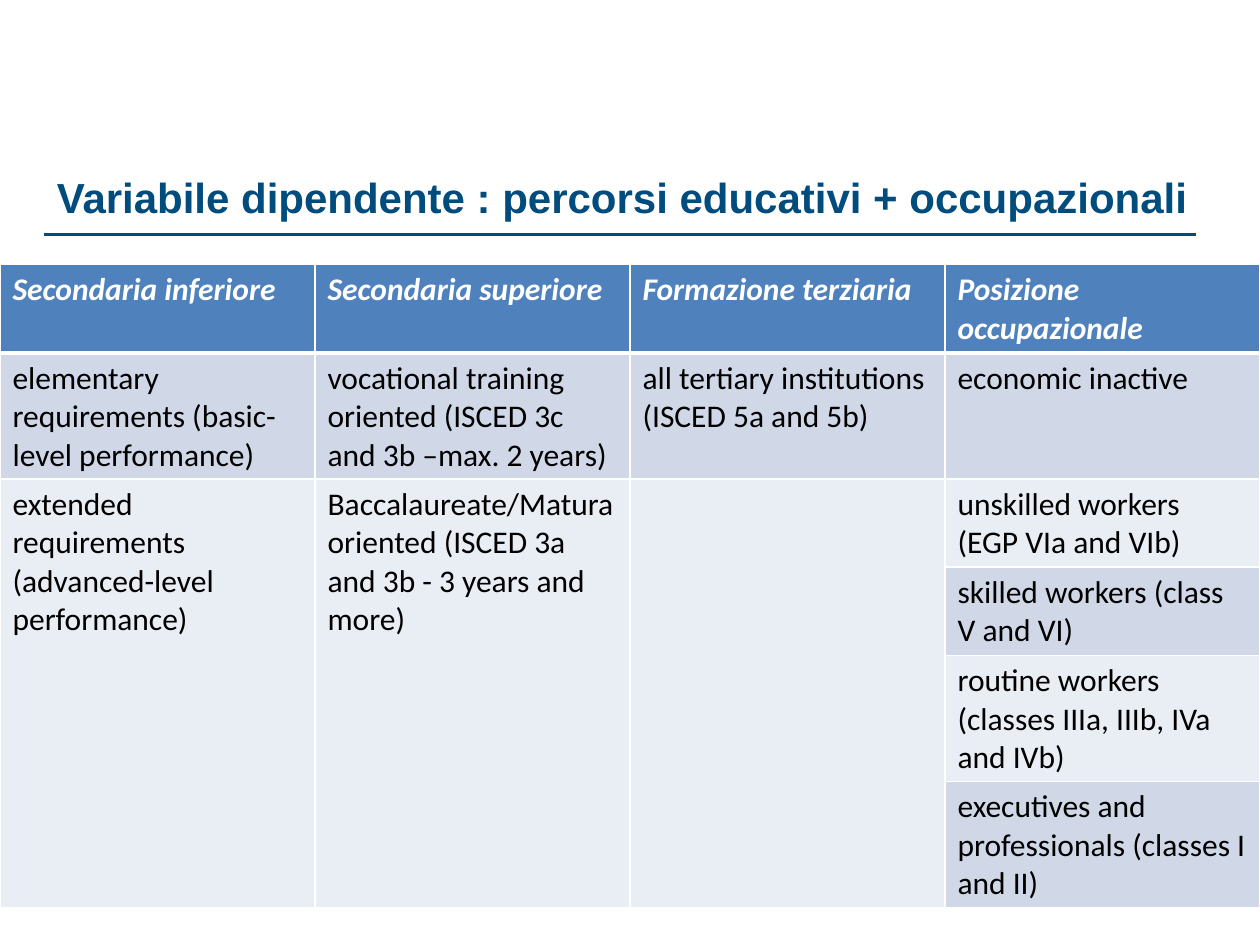
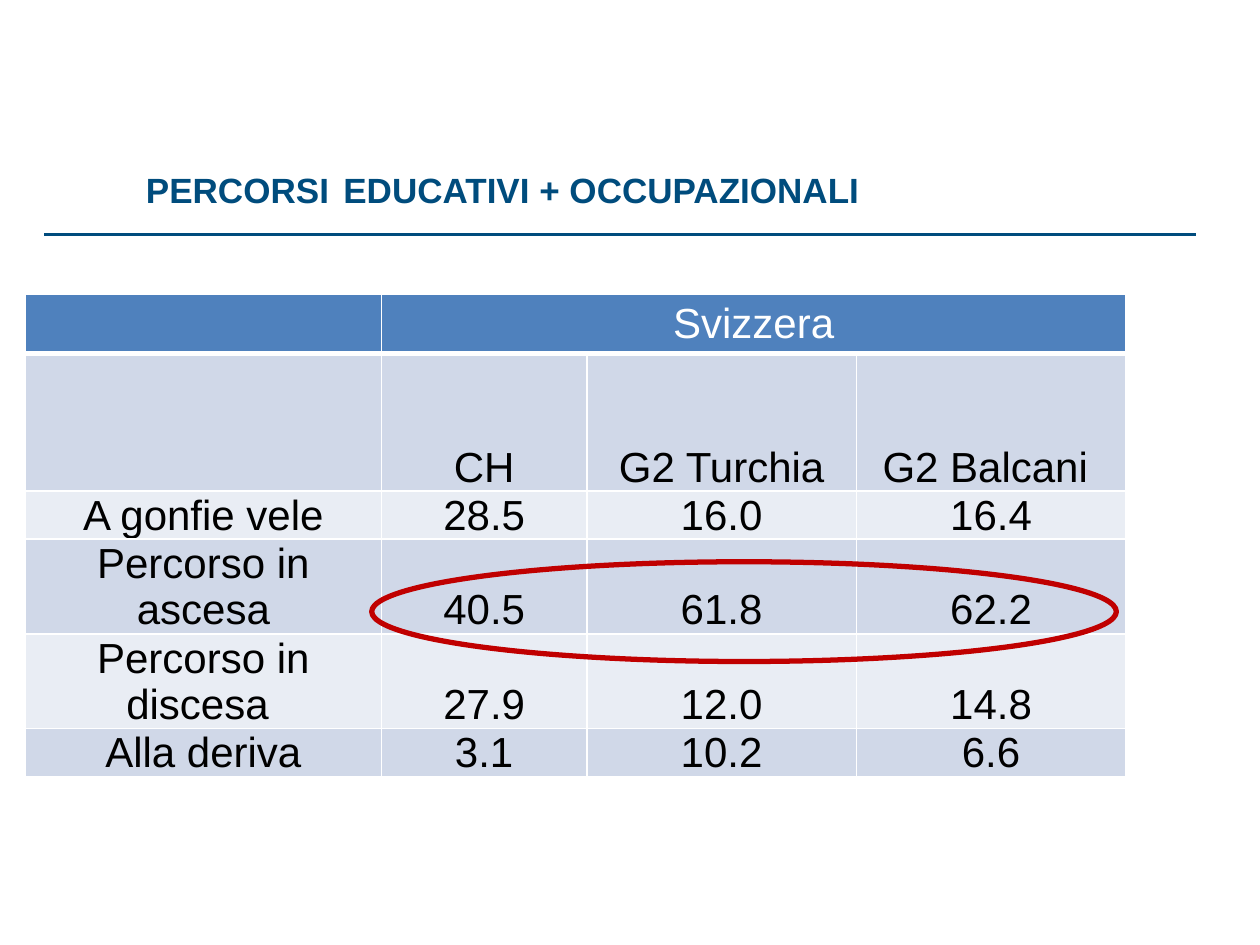
from pptx import Presentation
from pptx.dml.color import RGBColor as Rgb
from pptx.enum.shapes import MSO_CONNECTOR as Connector, MSO_SHAPE as Preset
from pptx.enum.text import MSO_ANCHOR as Anchor, PP_ALIGN as Align
from pptx.oxml import parse_xml
from pptx.oxml.ns import nsdecls
from pptx.util import Pt

# Content
COLOURS = {"title": "004C7D", "header": "4F81BD", "odd": "D0D8E8", "even": "E9EDF4",
           "light": "FFFFFF", "dark": "000000", "gap": "376092", "ring": "C00000"}

VARIABLE_TITLE = [("Variabile dipendente : percorsi educativi + occupazionali", "title_large")]
VARIABLE_ROWS = [
    ["Secondaria inferiore", "Secondaria superiore", "Formazione terziaria",
     "Posizione occupazionale"],
    ["elementary requirements (basic-level performance)",
     "vocational training oriented (ISCED 3c and 3b –max. 2 years)",
     "all tertiary institutions (ISCED 5a and 5b)", "economic inactive"],
    ["extended requirements (advanced-level performance)",
     "Baccalaureate/Matura oriented (ISCED 3a and 3b - 3 years and more)",
     "", "unskilled workers (EGP VIa and VIb)"],
    ["", "", "", "skilled workers (class V and VI)"],
    ["", "", "", "routine workers (classes IIIa, IIIb, IVa and IVb)"],
    ["", "", "", "executives and professionals (classes I and II)"],
]

PATHS_TITLE = [("PERCORSI", "title_small"), (" ", "title_gap"),
               ("EDUCATIVI + OCCUPAZIONALI", "title_small")]
PATHS_ROWS = [
    ["", "Svizzera", "", ""],
    ["", "CH", "G2 Turchia", "G2 Balcani "],
    ["A gonfie vele", "28.5", "16.0", "16.4"],
    ["Percorso in ascesa", "40.5", "61.8", "62.2"],
    ["Percorso in discesa ", "27.9", "12.0", "14.8"],
    ["Alla deriva", "3.1", "10.2", "6.6"],
]

# Formats
FONTS = {
    "title_large": ("title", dict(name="Arial", size=Pt(24), bold=True)),
    "title_small": ("title", dict(name="Arial", size=Pt(20), bold=True)),
    "title_gap": ("gap", dict(name="Calibri", size=Pt(36), bold=True)),
    "variable_header": ("light", dict(name="Calibri", size=Pt(18), bold=True, italic=True)),
    "variable_body": ("dark", dict(name="Calibri", size=Pt(18), bold=False, italic=False)),
    "paths_header": ("light", dict(name="Arial", size=Pt(24), bold=False)),
    "paths_body": ("dark", dict(name="Arial", size=Pt(24), bold=False)),
}
TIGHT_CELL = dict(vertical_anchor=Anchor.BOTTOM, margin_left=Pt(0.7), margin_top=Pt(0.7),
                  margin_right=Pt(0.7), margin_bottom=Pt(0))
HANGING_INDENT = Pt(27)


def colour(name):
    return Rgb.from_string(COLOURS[name])


def apply(target, values):
    for name, value in values.items():
        setattr(target, name, value)


def add_span(para, text, style):
    colour_name, values = FONTS[style]
    span = para.add_run()
    span.text = text
    apply(span.font, values)
    span.font.color.rgb = colour(colour_name)


# Shared title and rule
def add_page(deck):
    page = deck.slides.add_slide(deck.slide_layouts[6])
    rule = page.shapes.add_connector(Connector.STRAIGHT, Pt(25.4), Pt(134), Pt(683.4), Pt(134))
    rule.line.color.rgb = colour("title")
    rule.line.width = Pt(2)
    rule._element.spPr.append(parse_xml(f"<a:effectLst {nsdecls('a')}/>"))
    return page


def add_title(page, spans, left, top, width):
    box = page.shapes.add_textbox(Pt(left), Pt(top), Pt(width), Pt(90.7))
    box.text_frame.word_wrap = True
    para = box.text_frame.paragraphs[0]
    properties = para._p.get_or_add_pPr()
    properties.set("marL", str(HANGING_INDENT))
    properties.set("indent", str(-HANGING_INDENT))
    for text, style in spans:
        add_span(para, text, style)


# Shared table
def set_borders(cell, bottom):
    properties = cell._tc.get_or_add_tcPr()
    sides = [("lnL", 1), ("lnR", 1), ("lnT", 1), ("lnB", bottom)]
    for place, (tag, width) in enumerate(sides):
        properties.insert(place, parse_xml(
            f'<a:{tag} {nsdecls("a")} w="{Pt(width)}"><a:solidFill>'
            f'<a:srgbClr val="{COLOURS["light"]}"/></a:solidFill></a:{tag}>'))


def add_grid(page, rows, left, top, widths, heights, merges, style, align, body_cell):
    frame = page.shapes.add_table(len(rows), len(widths), Pt(left), Pt(top),
                                  Pt(sum(widths)), Pt(sum(heights)))
    table = frame.table
    apply(table, dict(first_row=False, horz_banding=False))
    for column, width in zip(table.columns, widths):
        column.width = Pt(width)
    for row, height in zip(table.rows, heights):
        row.height = Pt(height)
    for first, last in merges:
        table.cell(*first).merge(table.cell(*last))
    for r, texts in enumerate(rows):
        band = "header" if r == 0 else "odd" if r % 2 else "even"
        for c, text in enumerate(texts):
            cell = table.cell(r, c)
            cell.fill.solid()
            cell.fill.fore_color.rgb = colour(band)
            set_borders(cell, 3 if r == 0 else 1)
            if text:
                para = cell.text_frame.paragraphs[0]
                para.alignment = align
                add_span(para, text, f"{style}_{'body' if r else 'header'}")
                if r:
                    apply(cell, body_cell)


# Slide 1: definition of the dependent variable
def build_variable_page(deck):
    page = add_page(deck)
    add_title(page, VARIABLE_TITLE, 25.4, 94.3, 674.6)
    merges = [((2, c), (5, c)) for c in range(3)]
    add_grid(page, VARIABLE_ROWS, 0, 151.2, [180] * 4, [50, 71, 50, 50, 71, 71],
             merges, "variable", Align.LEFT, {})


# Slide 2: shares of each path, with the rising path ringed
def build_paths_page(deck):
    page = add_page(deck)
    add_grid(page, PATHS_ROWS, 14.4, 168, [203.6, 117.4, 154, 154],
             [26.6, 78.5, 26.6, 52.6, 51.1, 26.6], [((0, 1), (0, 3))],
             "paths", Align.CENTER, TIGHT_CELL)
    add_title(page, PATHS_TITLE, 76.3, 77, 694.8)
    ring = page.shapes.add_shape(Preset.OVAL, Pt(212.4), Pt(321), Pt(425.5), Pt(57))
    ring.shadow.inherit = False
    ring.fill.background()
    ring.line.color.rgb = colour("ring")
    ring.line.width = Pt(3)


def main():
    deck = Presentation()
    apply(deck, dict(slide_width=Pt(720), slide_height=Pt(540)))
    build_variable_page(deck)
    build_paths_page(deck)
    deck.save("out.pptx")


if __name__ == "__main__":
    main()
